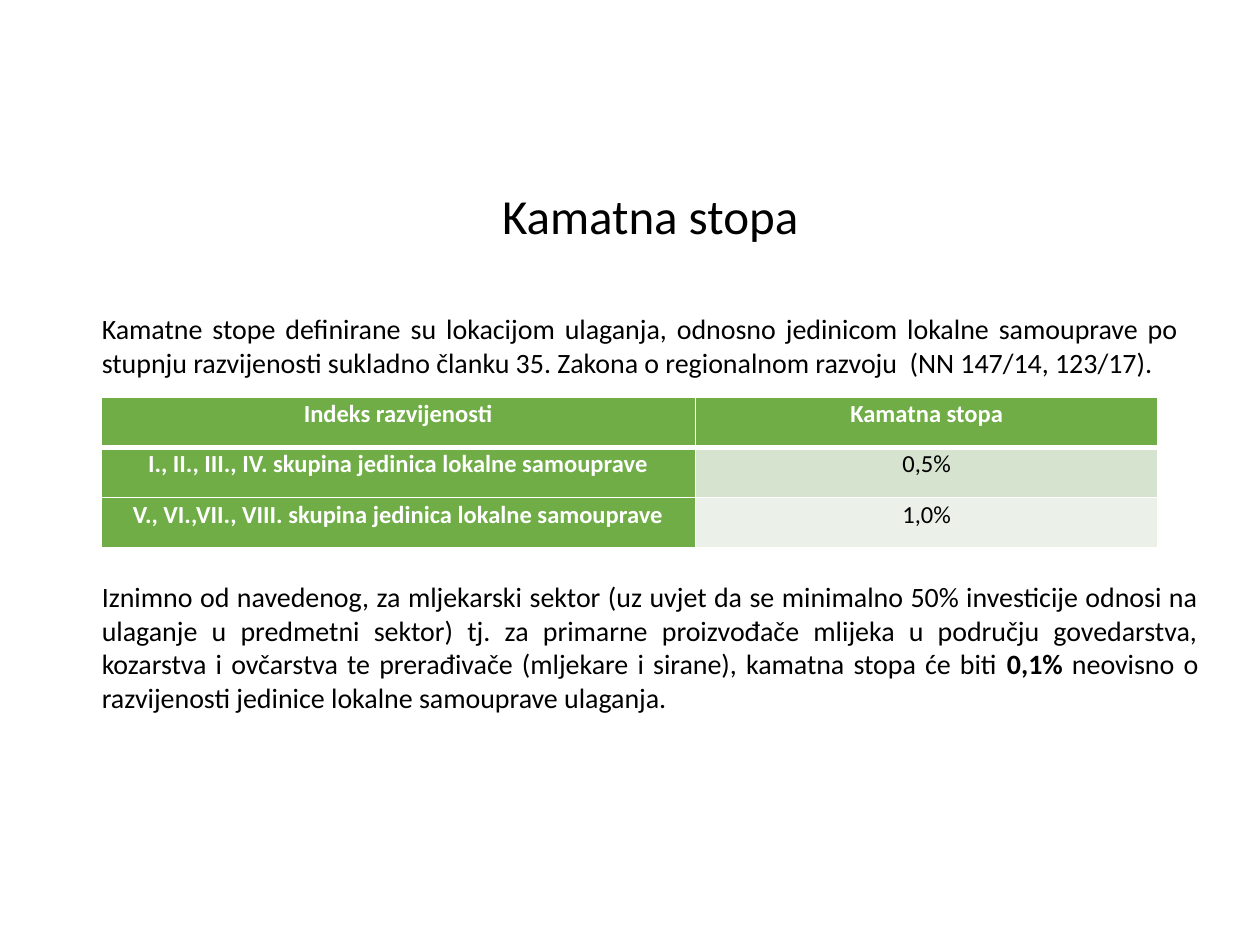
from lxml import etree
from pptx import Presentation
from pptx.dml.color import RGBColor
from pptx.enum.text import MSO_ANCHOR, PP_ALIGN
from pptx.oxml.ns import qn
from pptx.util import Inches, Pt

BLACK = RGBColor(0x00, 0x00, 0x00)
WHITE = RGBColor(0xFF, 0xFF, 0xFF)
GREEN = RGBColor(0x70, 0xAD, 0x47)
BANDS = [RGBColor(0xD5, 0xE3, 0xCF), RGBColor(0xEB, 0xF1, 0xE9)]

INTRO = [
    ("Kamatne stope definirane su lokacijom ulaganja, odnosno jedinicom lokalne "
     "samouprave po stupnju razvijenosti sukladno članku 35. Zakona o regionalnom "
     "razvoju  (NN 147/14, 123/17).", False),
]
EXCEPTION = [
    ("Iznimno od navedenog, za mljekarski sektor (uz uvjet da se minimalno 50% "
     "investicije odnosi na ulaganje u predmetni sektor) tj. za primarne proizvođače "
     "mlijeka u području govedarstva, kozarstva i ovčarstva te prerađivače (mljekare "
     "i sirane), kamatna stopa će biti ", False),
    ("0,1%", True),
    (" neovisno o razvijenosti jedinice lokalne samouprave ulaganja.", False),
]
RATES = [
    ("Indeks razvijenosti", "Kamatna stopa"),
    ("I., II., III., IV. skupina jedinica lokalne samouprave", "0,5%"),
    ("V., VI.,VII., VIII. skupina jedinica lokalne samouprave", "1,0%"),
]


def set_font(p, size, color, bold=None):
    p.font.name = "Calibri"
    p.font.size = Pt(size)
    p.font.color.rgb = color
    p.font.bold = bold


def add_title(s, text, left, top, width, height):
    title = s.shapes.title
    title.left, title.top = Inches(left), Inches(top)
    title.width, title.height = Inches(width), Inches(height)
    tf = title.text_frame
    tf.text = text
    tf.vertical_anchor = MSO_ANCHOR.MIDDLE
    p = tf.paragraphs[0]
    p.alignment = PP_ALIGN.CENTER
    set_font(p, 28, BLACK)


def add_body(s, runs, left, top, width, height, anchor=MSO_ANCHOR.TOP):
    box = s.shapes.add_textbox(Inches(left), Inches(top), Inches(width), Inches(height))
    tf = box.text_frame
    tf.word_wrap = True
    tf.vertical_anchor = anchor
    p = tf.paragraphs[0]
    p.alignment = PP_ALIGN.JUSTIFY
    set_font(p, 16, BLACK)
    for text, bold in runs:
        r = p.add_run()
        r.text = text
        r.font.bold = bold


def set_borders(cell, top, bottom):
    # Border lines come before the fill in the cell properties
    tc_pr = cell._tc.get_or_add_tcPr()
    widths = {"a:lnL": 1, "a:lnR": 1, "a:lnT": top, "a:lnB": bottom}
    for i, (tag, width) in enumerate(widths.items()):
        ln = etree.Element(qn(tag), w=str(Pt(width)))
        fill = etree.SubElement(ln, qn("a:solidFill"))
        etree.SubElement(fill, qn("a:srgbClr"), val=str(WHITE))
        tc_pr.insert(i, ln)


def add_rate_table(s, left, top, col_widths, row_height):
    table = s.shapes.add_table(
        len(RATES), len(col_widths), Inches(left), Inches(top),
        Inches(sum(col_widths)), Inches(row_height * len(RATES))).table
    for column, width in zip(table.columns, col_widths):
        column.width = Inches(width)
    for i, row in enumerate(RATES):
        for j, text in enumerate(row):
            cell = table.cell(i, j)
            heading = i == 0 or j == 0
            cell.margin_left = cell.margin_right = Inches(0.07)
            cell.margin_top = cell.margin_bottom = 0
            cell.fill.solid()
            cell.fill.fore_color.rgb = GREEN if heading else BANDS[i - 1]
            set_borders(cell, top=3 if i == 1 else 1, bottom=3 if i == 0 else 1)
            cell.text = text
            p = cell.text_frame.paragraphs[0]
            p.alignment = PP_ALIGN.CENTER
            p.line_spacing = 1.07
            set_font(p, 14, WHITE if heading else BLACK, heading)


def main():
    prs = Presentation()
    prs.slide_width, prs.slide_height = Inches(10), Inches(7.5)
    s = prs.slides.add_slide(prs.slide_layouts[5])

    add_title(s, "Kamatna stopa", 2.52, 1.3, 5.28, 0.81)
    add_body(s, INTRO, 0.71, 2.42, 8.74, 0.64, MSO_ANCHOR.MIDDLE)
    add_rate_table(s, 0.8, 3.15, [4.72, 3.67], 0.4)
    add_body(s, EXCEPTION, 0.71, 4.55, 8.9, 1.18)

    prs.save("out.pptx")


if __name__ == "__main__":
    main()
